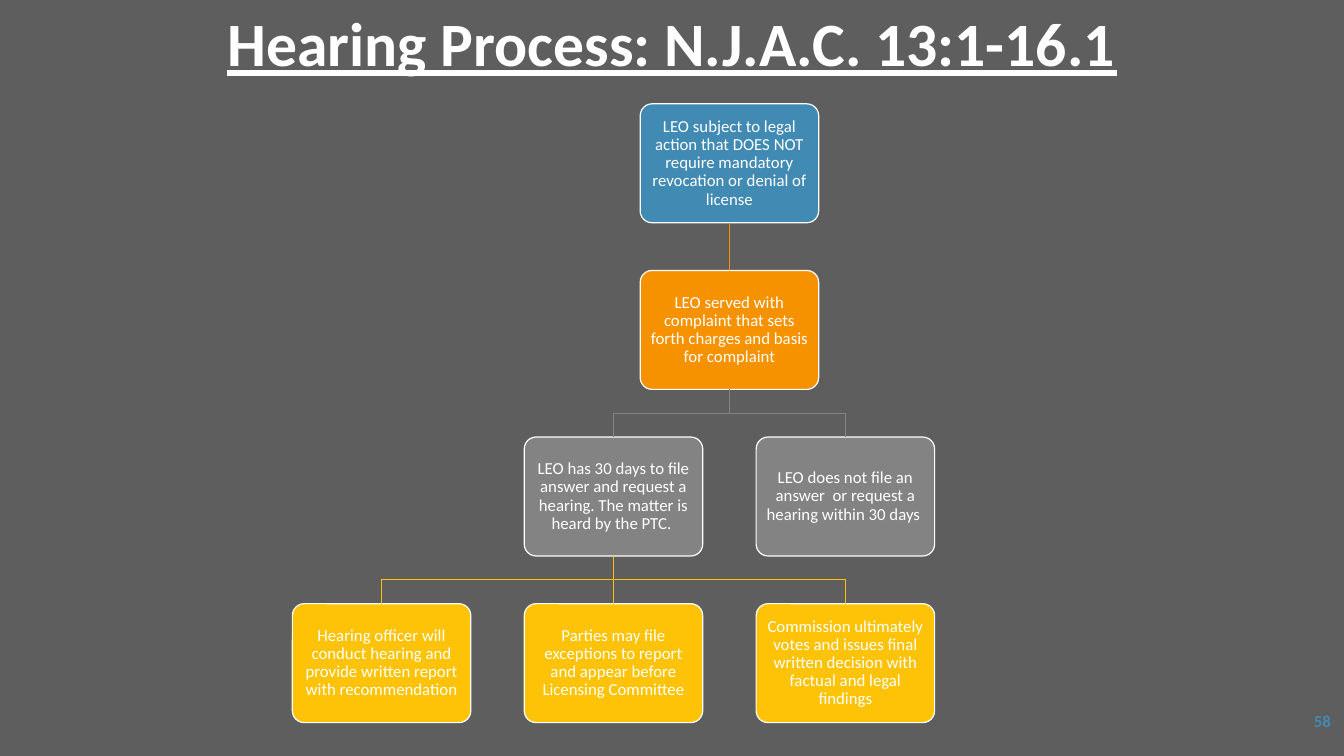
from lxml import etree
from pptx import Presentation
from pptx import util as u
from pptx.dml.color import RGBColor
from pptx.enum import shapes, text
from pptx.oxml.ns import qn

COLORS = {
    "background": "5E5E5E", "white": "FFFFFF", "action": "418AB3",
    "complaint": "F69200", "answer": "838383", "hearing": "FEC306",
}
SLIDE_W, SLIDE_H = 13.33, 7.5
# Chart grid: origin, step between columns and rows, box size (inches)
LEFT, TOP = 2.9, 1.03
COL_STEP, ROW_STEP = 2.3, 1.653
BOX_W, BOX_H = 1.77, 1.18

# Step: (column, row, colour, parent step, wording)
STEPS = {
    "action": (1.5, 0, "action", None,
               "LEO subject to legal action that DOES NOT require mandatory "
               "revocation or denial of license"),
    "complaint": (1.5, 1, "complaint", "action",
                  "LEO served with complaint that sets forth charges and "
                  "basis for complaint"),
    "answer": (1, 2, "answer", "complaint",
               "LEO has 30 days to file answer and request a hearing. "
               "The matter is heard by the PTC. "),
    "no answer": (2, 2, "answer", "complaint",
                  "LEO does not file an answer  or request a hearing "
                  "within 30 days "),
    "report": (0, 3, "hearing", "answer",
               "Hearing officer will conduct hearing and provide written "
               "report with recommendation"),
    "exceptions": (1, 3, "hearing", "answer",
                   "Parties may file exceptions to report and appear before "
                   "Licensing Committee"),
    "decision": (2, 3, "hearing", "answer",
                 "Commission ultimately votes and issues final written "
                 "decision with factual and legal findings"),
}


def rgb(name):
    return RGBColor.from_string(COLORS[name])


def apply(target, values):
    for key, value in values.items():
        setattr(target, key, value)


def write(shape, wording, size, color, align, inset, **font):
    """Put one formatted paragraph into a shape."""
    frame = shape.text_frame
    apply(frame, {"word_wrap": True, "vertical_anchor": text.MSO_ANCHOR.MIDDLE})
    apply(frame, {f"margin_{side}": u.Inches(inset)
                  for side in ("left", "right", "top", "bottom")})
    paragraph = frame.paragraphs[0]
    paragraph.alignment = align
    run = paragraph.add_run()
    run.text = wording
    apply(run.font, {"name": "Calibri", "size": u.Pt(size), **font})
    run.font.color.rgb = rgb(color)
    return paragraph


def outline(shape, color):
    shape.line.color.rgb = rgb(color)
    shape.line.width = u.Pt(0.85)


def add_step(slide, column, row, color, wording):
    box = slide.shapes.add_shape(
        shapes.MSO_SHAPE.ROUNDED_RECTANGLE,
        u.Inches(LEFT + column * COL_STEP), u.Inches(TOP + row * ROW_STEP),
        u.Inches(BOX_W), u.Inches(BOX_H))
    box.adjustments[0] = 0.1
    box.shadow.inherit = False
    box.fill.solid()
    box.fill.fore_color.rgb = rgb(color)
    outline(box, "white")
    paragraph = write(box, wording, 12, "white", text.PP_ALIGN.CENTER, 0.05)
    paragraph.line_spacing = 0.9
    return box


def add_branch(slide, parent, child, color):
    """Link two steps: a straight line in one column, an elbow otherwise."""
    start_x, end_x = (box.left + box.width // 2 for box in (parent, child))
    start_y, end_y = parent.top + parent.height, child.top
    if start_x == end_x:
        branch = slide.shapes.add_connector(
            shapes.MSO_CONNECTOR.STRAIGHT, start_x, start_y, end_x, end_y)
        branch.begin_connect(parent, 2)
        branch.end_connect(child, 0)
        etree.SubElement(branch._element.spPr, qn("a:effectLst"))
    else:
        middle_y = (start_y + end_y) // 2
        builder = slide.shapes.build_freeform(start_x, start_y)
        builder.add_line_segments(
            [(start_x, middle_y), (end_x, middle_y), (end_x, end_y)],
            close=False)
        branch = builder.convert_to_shape()
        branch.fill.background()
        branch.shadow.inherit = False
    outline(branch, color)


def main():
    deck = Presentation()
    apply(deck, {"slide_width": u.Inches(SLIDE_W),
                 "slide_height": u.Inches(SLIDE_H)})
    slide = deck.slides.add_slide(deck.slide_layouts[5])
    slide.background.fill.solid()
    slide.background.fill.fore_color.rgb = rgb("background")

    # Heading
    heading = slide.shapes.title
    apply(heading, {"left": 0, "top": 0, "width": deck.slide_width,
                    "height": u.Inches(0.84)})
    write(heading, "Hearing Process: N.J.A.C. 13:1-16.1", 44, "white",
          text.PP_ALIGN.CENTER, 0.05, bold=True, underline=True)

    # Flow of the hearing
    boxes = {}
    for step, (column, row, color, parent, wording) in STEPS.items():
        boxes[step] = add_step(slide, column, row, color, wording)
        if parent:
            add_branch(slide, boxes[parent], boxes[step], color)

    # Page number
    page = slide.shapes.add_textbox(
        u.Inches(SLIDE_W * 0.94), u.Inches(SLIDE_H * 0.934),
        u.Inches(SLIDE_W * 0.054), u.Inches(SLIDE_H * 0.04))
    write(page, "58", 12, "action", text.PP_ALIGN.RIGHT, 0.05, bold=True)

    deck.save("out.pptx")


if __name__ == "__main__":
    main()
